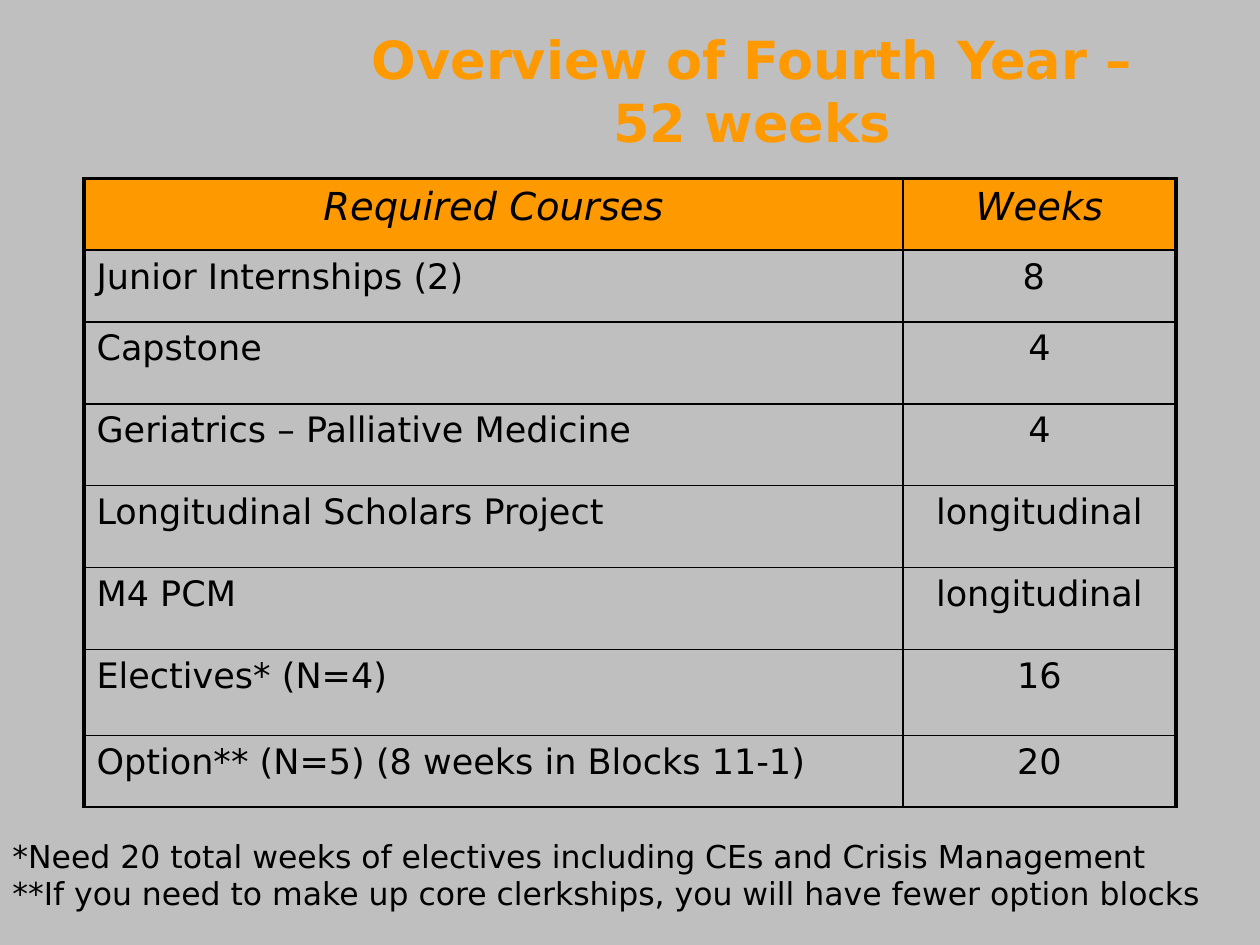
from lxml.etree import SubElement
from pptx import Presentation
from pptx.dml.color import RGBColor
from pptx.enum.text import MSO_ANCHOR, MSO_AUTO_SIZE, PP_ALIGN
from pptx.oxml.ns import qn
from pptx.util import Pt

COLORS = {"background": "BFBFBF", "accent": "FF9900", "text": "000000"}
FONT = "DejaVu Sans"


def style(p, color="text", align=PP_ALIGN.LEFT, **formats):
    p.alignment = align
    for r in p.runs:
        r.font.color.rgb = RGBColor.from_string(COLORS[color])
        for name, value in {"name": FONT, **formats}.items():
            setattr(r.font, name, value)


def add_borders(cell, widths):
    tcPr = cell._tc.get_or_add_tcPr()
    for i, (side, width) in enumerate(widths.items()):
        ln = tcPr.makeelement(qn(f"a:{side}"), {"w": str(Pt(width))})
        fill = SubElement(ln, qn("a:solidFill"))
        SubElement(fill, qn("a:srgbClr"), val=COLORS["text"])
        tcPr.insert(i, ln)


prs = Presentation()
prs.slide_width, prs.slide_height = Pt(720), Pt(540)
s = prs.slides.add_slide(prs.slide_layouts[5])
s.background.fill.solid()
s.background.fill.fore_color.rgb = RGBColor.from_string(COLORS["background"])

title = s.shapes.title
title.left, title.top, title.width, title.height = Pt(204), Pt(12), Pt(462), Pt(102)
tf = title.text_frame
tf.text = "Overview of Fourth Year – \v52 weeks "
for name, value in {"word_wrap": True, "auto_size": MSO_AUTO_SIZE.NONE,
                    "vertical_anchor": MSO_ANCHOR.TOP}.items():
    setattr(tf, name, value)
style(tf.paragraphs[0], "accent", PP_ALIGN.CENTER, size=Pt(30), bold=True)

courses = [
    ("Required Courses", "Weeks", 41),
    ("Junior Internships (2)", "8 ", 41),
    ("Capstone", "4", 46.8),
    ("Geriatrics – Palliative Medicine", "4", 46.8),
    ("Longitudinal Scholars Project", "longitudinal", 46.8),
    ("M4 PCM", "longitudinal", 46.8),
    ("Electives* (N=4)", "16", 49),
    ("Option** (N=5) (8 weeks in Blocks 11-1)", "20", 41),
]
table = s.shapes.add_table(len(courses), 2, Pt(48), Pt(102), Pt(624), Pt(360)).table
table.columns[0].width, table.columns[1].width = Pt(468), Pt(156)
for row, (course, weeks, height) in enumerate(courses):
    table.rows[row].height = Pt(height)
    header = row == 0
    for col, text in enumerate((course, weeks)):
        cell = table.cell(row, col)
        cell.text = text
        if header:
            cell.fill.solid()
            cell.fill.fore_color.rgb = RGBColor.from_string(COLORS["accent"])
        else:
            cell.fill.background()
        add_borders(cell, {"lnL": 2.25 if col == 0 else 1, "lnR": 2.25 if col == 1 else 1,
                           "lnT": 2.25 if header else 1, "lnB": 1})
        style(cell.text_frame.paragraphs[0],
              align=PP_ALIGN.CENTER if header or col == 1 else PP_ALIGN.LEFT,
              size=Pt(22 if header else 20), italic=header, bold=False)

notes = [
    "*Need 20 total weeks of electives including CEs and Crisis Management",
    "**If you need to make up core clerkships, you will have fewer option blocks",
]
tf = s.shapes.add_textbox(Pt(0), Pt(474.5), Pt(719), Pt(51)).text_frame
tf.word_wrap = False
tf.auto_size = MSO_AUTO_SIZE.SHAPE_TO_FIT_TEXT
tf.text = "\n".join(notes)
for p in tf.paragraphs:
    style(p, size=Pt(18))

prs.save("out.pptx")
